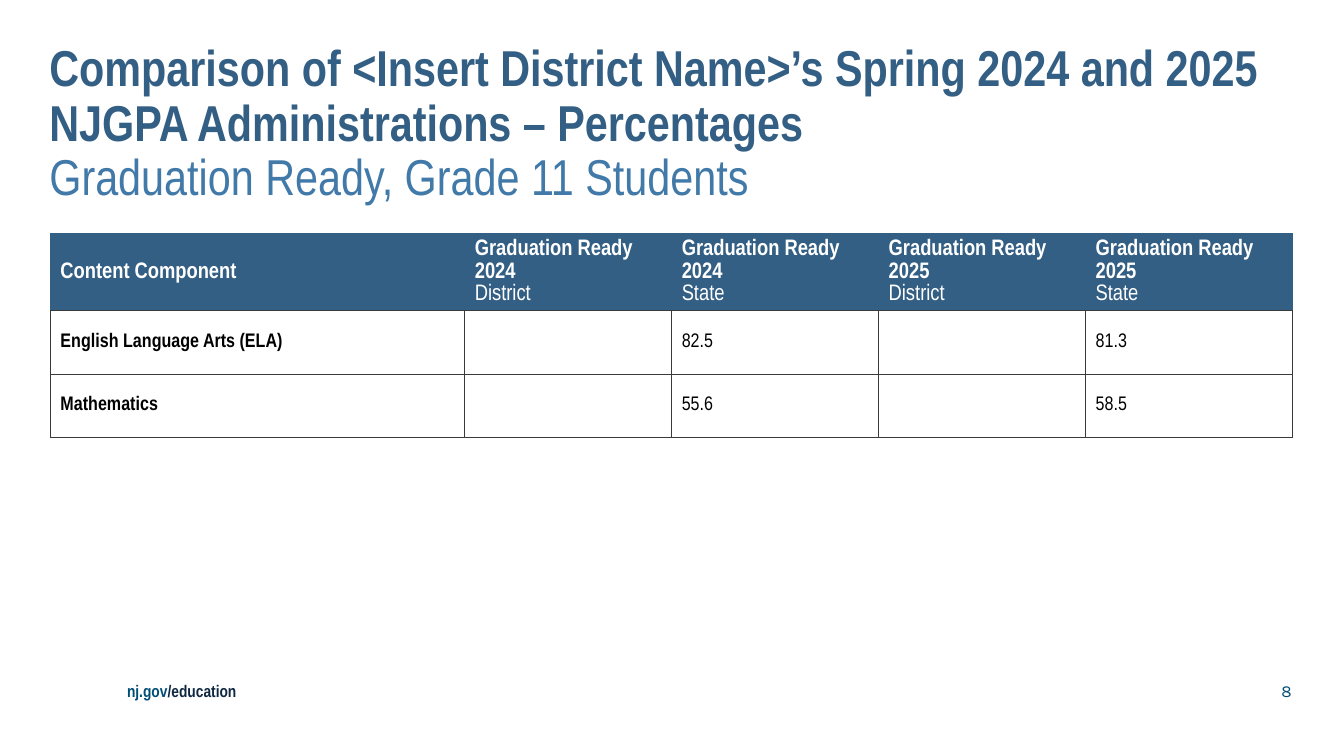
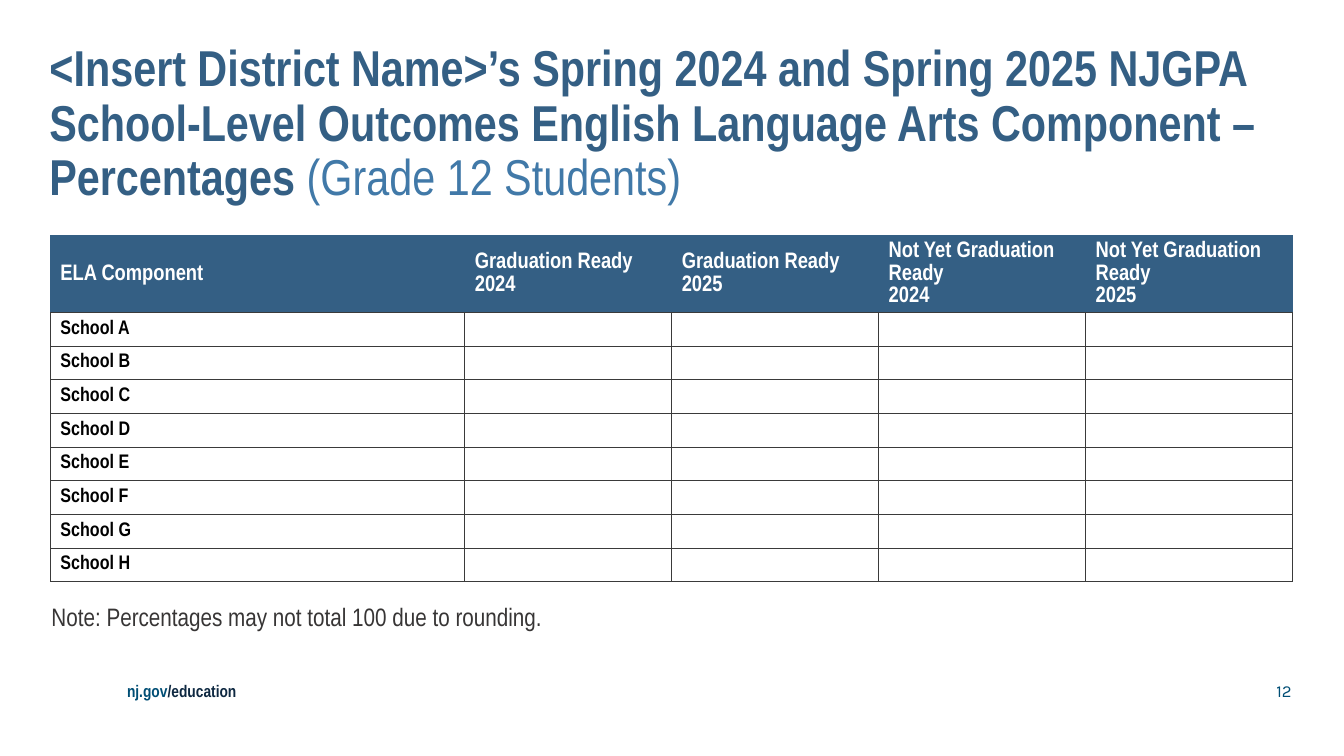
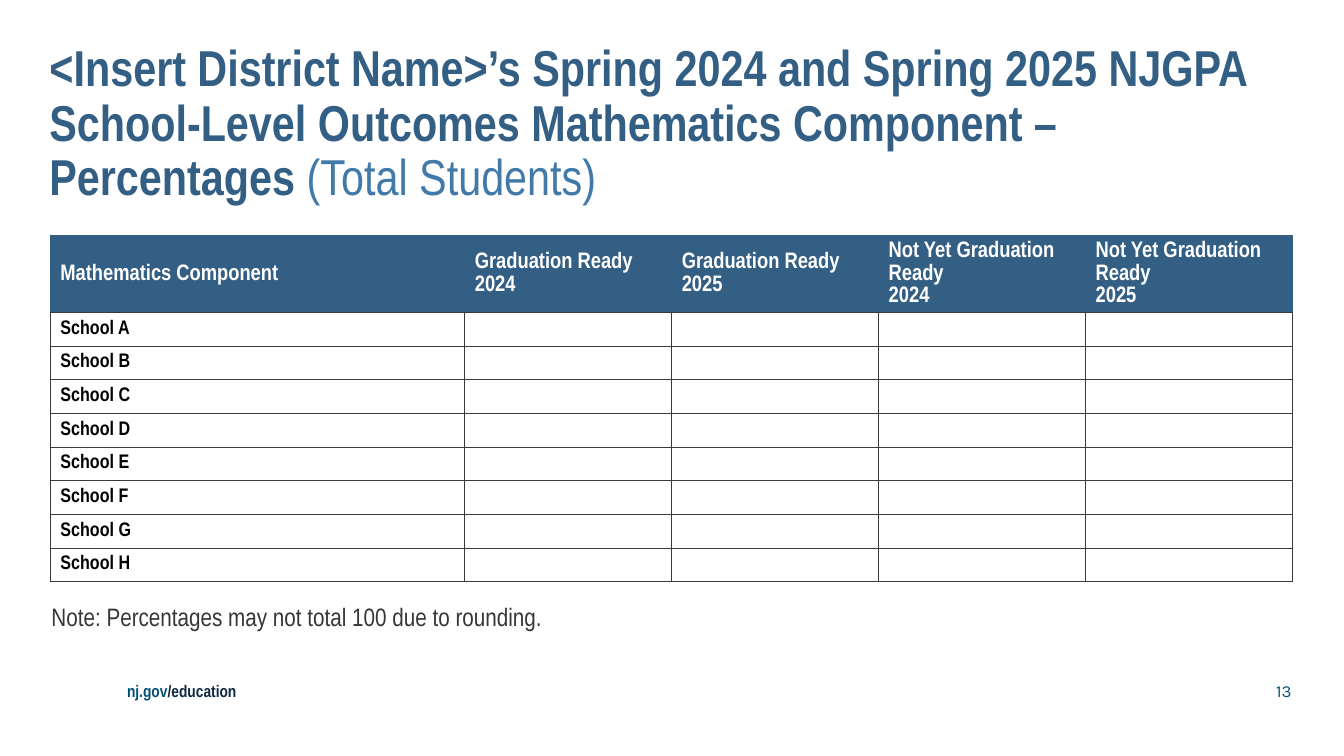
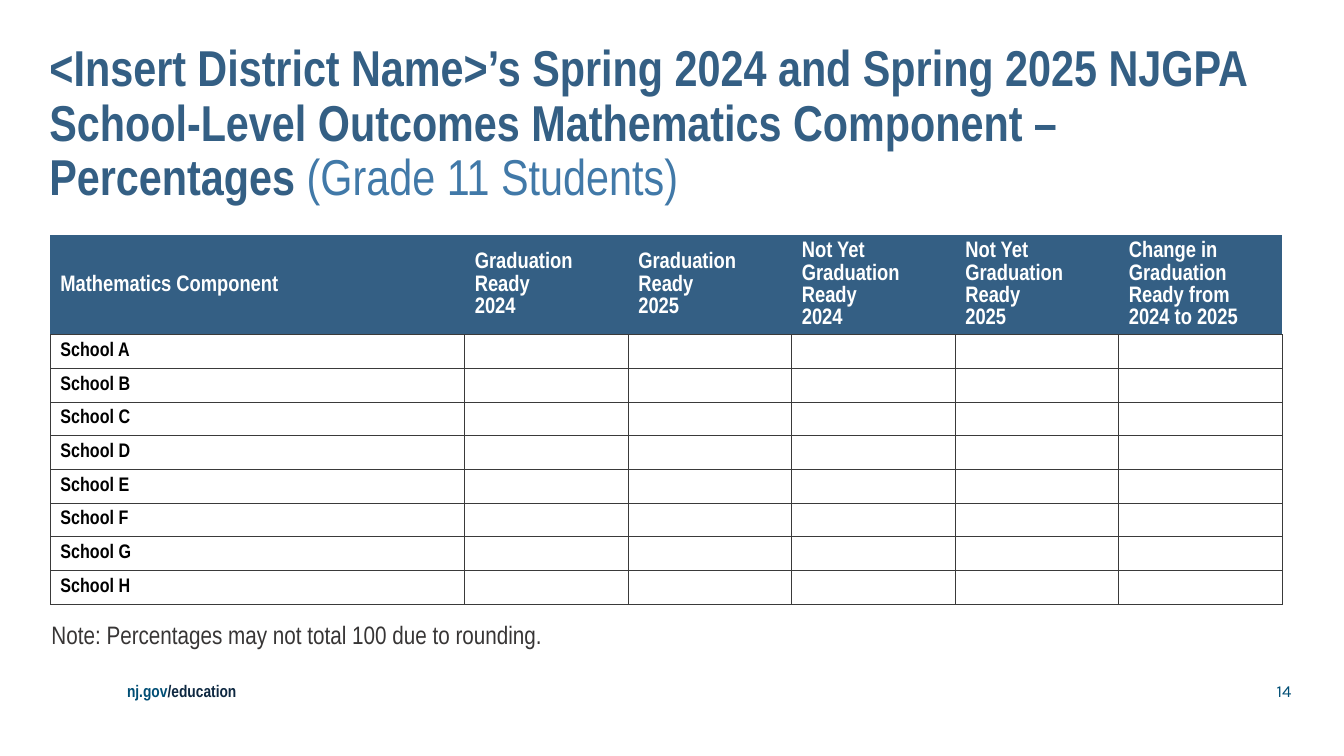
"""Build four slides of assessment outcome tables."""
from dataclasses import dataclass

from lxml import etree
from pptx import Presentation, util as u
from pptx.dml.color import RGBColor
from pptx.enum import text
from pptx.oxml.ns import qn

W, H = 13.33, 7.5
LEFT, WIDTH, LABEL_COL = 0.5, 12.32, 4.11
FONT, NUMBER_FONT = "Arial Narrow", "Karla"
NAVY, BLUE, TEAL, INK = "345F84", "4179A8", "004E75", "0E2841"
GREY, RULE, WHITE, BLACK = "373535", "3A3A3A", "FFFFFF", "000000"
SCHOOLS = [(f"School {letter}",) for letter in "ABCDEFGH"]
READY = ["Graduation Ready\n2024", "Graduation Ready\n2025"]
OUTCOMES = READY + [f"Not Yet {label}" for label in READY]
NOTE = "Note: Percentages may not total 100 due to rounding."


@dataclass
class Run:
    """A stretch of text in one colour and weight."""
    text: str
    color: str
    bold: bool = False


@dataclass
class TableSlide:
    """The content and measures of one slide."""
    number: int
    title: str
    subtitle: str
    header: list[list[str]]
    rows: list[tuple[str, ...]]
    top: float = 2.33
    width: float = WIDTH
    header_height: float = 0.77
    row_height: float = 0.33
    note_top: float | None = 6.0


def rgb(color: str) -> RGBColor:
    """Turn a hex string into a colour."""
    return RGBColor.from_string(color)


def write(p, runs: list[Run], size: float, font: str = FONT) -> None:
    """Fill a paragraph with runs, turning newlines into line breaks."""
    p.font.name, p.font.size = font, u.Pt(size)
    for run in runs:
        for i, line in enumerate(run.text.split("\n")):
            if i:
                p.add_line_break()
            if line:
                r = p.add_run()
                r.text = line
                r.font.name, r.font.size = font, u.Pt(size)
                r.font.bold = run.bold
                r.font.color.rgb = rgb(run.color)


def add_text(s, box: tuple[float, float, float, float], runs: list[Run],
             size: float, font: str = FONT, spacing: float = 1.0,
             align=text.PP_ALIGN.LEFT, anchor=text.MSO_ANCHOR.TOP) -> None:
    """Add a wrapping text box without insets."""
    tf = s.shapes.add_textbox(*map(u.Inches, box)).text_frame
    tf.word_wrap, tf.vertical_anchor = True, anchor
    tf.margin_left = tf.margin_right = tf.margin_top = tf.margin_bottom = 0
    p = tf.paragraphs[0]
    p.alignment, p.line_spacing = align, spacing
    write(p, runs, size, font)


def set_borders(cell, ruled: str) -> None:
    """Rule the named sides of a cell and clear the others."""
    tc_pr = cell._tc.get_or_add_tcPr()
    for i, side in enumerate("LRTB"):
        ln = etree.Element(qn(f"a:ln{side}"), w=str(u.Pt(0.5)))
        if side in ruled:
            fill = etree.SubElement(ln, qn("a:solidFill"))
            etree.SubElement(fill, qn("a:srgbClr"), val=RULE)
        else:
            etree.SubElement(ln, qn("a:noFill"))
        tc_pr.insert(i, ln)


def fill_header(cell, parts: list[str]) -> None:
    """Fill a header cell: a bold label, then an optional plain line."""
    cell.fill.solid()
    cell.fill.fore_color.rgb = rgb(NAVY)
    set_borders(cell, "B")
    p = cell.text_frame.paragraphs[0]
    p.line_spacing = u.Pt(16)
    label, *rest = parts
    write(p, [Run(label, WHITE, True)] + [Run(f"\n{t}", WHITE) for t in rest], 16)


def fill_body(cell, value: str, bold: bool) -> None:
    """Fill a ruled body cell, keeping the text size when it is empty."""
    cell.fill.background()
    set_borders(cell, "LRTB")
    p = cell.text_frame.paragraphs[0]
    write(p, [Run(value, BLACK, bold)], 14)
    if not value:
        etree.SubElement(p._p, qn("a:endParaRPr"), sz="1400")


def add_outcome_table(s, spec: TableSlide) -> None:
    """Add the table: a wide label column and equal value columns."""
    n = len(spec.header)
    heights = [spec.header_height] + [spec.row_height] * len(spec.rows)
    table = s.shapes.add_table(
        len(heights), n, u.Inches(LEFT), u.Inches(spec.top),
        u.Inches(spec.width), u.Inches(sum(heights))).table
    table.first_row = table.horz_banding = False
    for i, column in enumerate(table.columns):
        column.width = u.Inches((spec.width - LABEL_COL) / (n - 1) if i else LABEL_COL)
    for row, height in zip(table.rows, heights):
        row.height = u.Inches(height)
    for i, parts in enumerate(spec.header):
        fill_header(table.cell(0, i), parts)
    for j, values in enumerate(spec.rows, 1):
        for i in range(n):
            fill_body(table.cell(j, i), values[i] if i < len(values) else "", i == 0)
    for cell in table.iter_cells():
        cell.vertical_anchor = text.MSO_ANCHOR.MIDDLE


def add_footer(s, number: int) -> None:
    """Add the site address and the slide number."""
    middle = text.MSO_ANCHOR.MIDDLE
    add_text(s, (1.26, 6.75, 5.62, 0.2),
             [Run("nj.gov", TEAL, True), Run("/education", INK, True)], 12, anchor=middle)
    add_text(s, (7.19, 6.75, 5.62, 0.2), [Run(str(number), TEAL)], 12, NUMBER_FONT,
             align=text.PP_ALIGN.RIGHT, anchor=middle)


def add_slide(prs, spec: TableSlide) -> None:
    """Add one complete slide."""
    s = prs.slides.add_slide(prs.slide_layouts[6])
    add_footer(s, spec.number)
    add_text(s, (0.49, 0.43, 12.33, 0.46),
             [Run(spec.title, NAVY, True), Run(spec.subtitle, BLUE)], 36, spacing=0.9)
    if spec.note_top is not None:
        add_text(s, (0.51, spec.note_top, WIDTH, 0.33), [Run(NOTE, GREY)], 18, spacing=0.9)
    add_outcome_table(s, spec)


def school_slide(number: int, subject: str, short: str, students: str,
                 extra: tuple[str, ...] = (), **measures: float) -> TableSlide:
    """Describe a slide of outcomes by school."""
    return TableSlide(
        number,
        "<Insert District Name>’s Spring 2024 and Spring 2025 NJGPA "
        f"School-Level Outcomes {subject} Component – Percentages ",
        f"({students} Students)",
        [[label] for label in (f"{short} Component", *OUTCOMES, *extra)],
        SCHOOLS, **measures)


def main() -> None:
    """Build and save the presentation."""
    prs = Presentation()
    prs.slide_width, prs.slide_height = u.Inches(W), u.Inches(H)
    maths = "Mathematics"
    comparison = TableSlide(
        8,
        "Comparison of <Insert District Name>’s Spring 2024 and 2025 "
        "NJGPA Administrations – Percentages\n",
        "Graduation Ready, Grade 11 Students",
        [["Content Component"]]
        + [[label, area] for label in READY for area in ("District", "State")],
        [("English Language Arts (ELA)", "", "82.5", "", "81.3"),
         (maths, "", "55.6", "", "58.5")],
        top=2.31, row_height=0.63, note_top=None)
    for spec in (
        comparison,
        school_slide(12, "English Language Arts", "ELA", "Grade 12"),
        school_slide(13, maths, maths, "Total"),
        school_slide(14, maths, maths, "Grade 11",
                     ("Change in Graduation Ready from 2024 to 2025",),
                     width=12.22, header_height=0.99, note_top=6.18),
    ):
        add_slide(prs, spec)
    prs.save("out.pptx")


if __name__ == "__main__":
    main()
